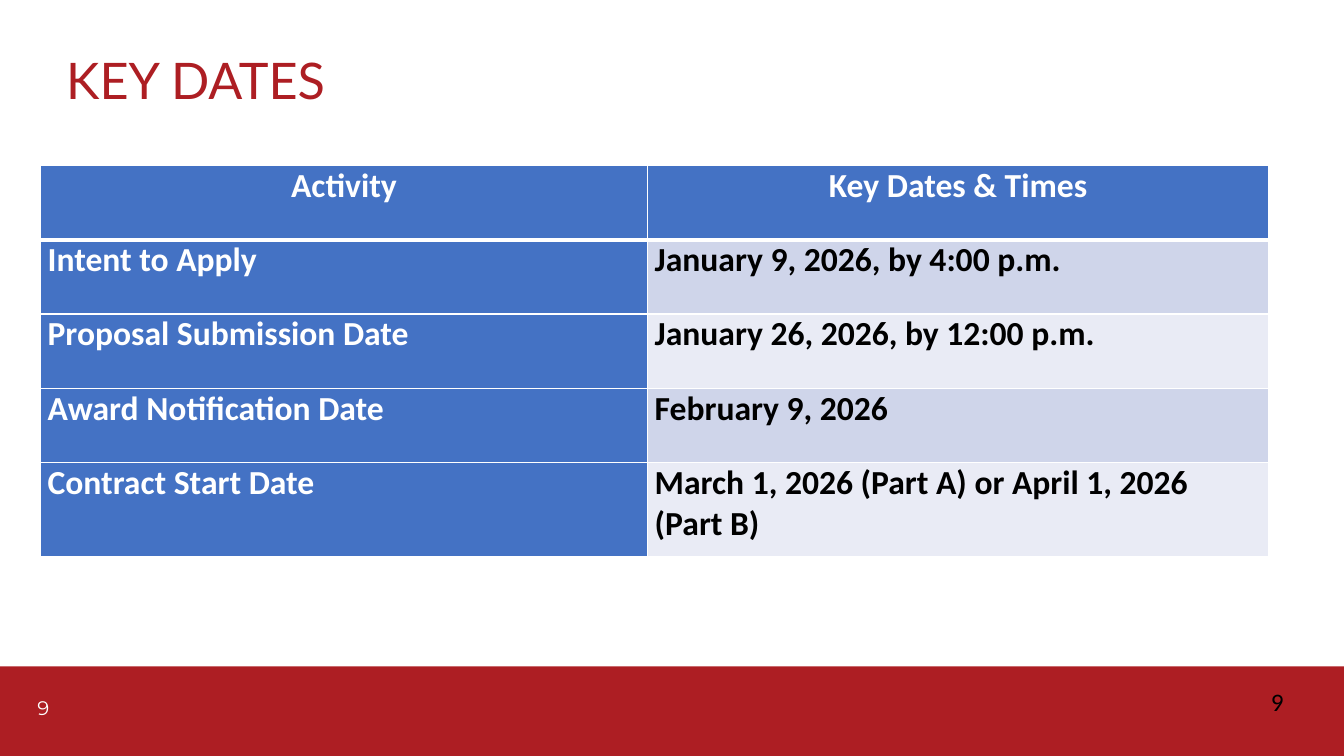
"""Build the key dates slide."""
from lxml import etree
from pptx import Presentation
from pptx.dml.color import RGBColor
from pptx.enum.shapes import MSO_SHAPE
from pptx.enum.text import MSO_ANCHOR, PP_ALIGN
from pptx.oxml.ns import qn
from pptx.util import Cm, Pt

RECT = MSO_SHAPE.RECTANGLE
MIDDLE, TOP = MSO_ANCHOR.MIDDLE, MSO_ANCHOR.TOP
CENTER, LEFT = PP_ALIGN.CENTER, PP_ALIGN.LEFT

RED, BLUE, WHITE, BLACK = "AD1E23", "4472C4", "FFFFFF", "000000"
BANDS = ("CFD5EA", "E9EBF5")
SLIDE_W, SLIDE_H, FOOTER_H = 33.87, 19.05, 2.26

TITLE = "KEY DATES"
PAGE = "9"
DATES = [
    ("Activity", "Key Dates & Times"),
    ("Intent to Apply", "January 9, 2026, by 4:00 p.m."),
    ("Proposal Submission Date", "January 26, 2026, by 12:00 p.m."),
    ("Award Notification Date", "February 9, 2026"),
    ("Contract Start Date", "March 1, 2026 (Part A) or April 1, 2026 (Part B)"),
]
COL_W = (15.3, 15.65)
ROW_H = (1.87, 1.87, 1.87, 1.87, 2.37)


def rgb(color):
    return RGBColor.from_string(color)


def write(tf, text, font="Calibri", size=24, color=BLACK, bold=False,
          align=LEFT, spacing=None):
    tf.word_wrap = True
    p = tf.paragraphs[0]
    p.alignment = align
    if spacing:
        p.line_spacing = spacing
    r = p.add_run()
    r.text = text
    r.font.name, r.font.size, r.font.bold = font, Pt(size), bold
    r.font.color.rgb = rgb(color)


def add_text(s, box, text, anchor=TOP, **fmt):
    tf = s.shapes.add_textbox(*map(Cm, box)).text_frame
    tf.vertical_anchor = anchor
    write(tf, text, **fmt)


def border(cell, **widths):
    tcPr = cell._tc.get_or_add_tcPr()
    for side, width in widths.items():
        ln = etree.SubElement(tcPr, qn(f"a:ln{side}"), w=str(Pt(width)))
        fill = etree.SubElement(ln, qn("a:solidFill"))
        etree.SubElement(fill, qn("a:srgbClr"), val=WHITE)


def add_dates(s, left, top):
    table = s.shapes.add_table(len(DATES), len(COL_W), Cm(left), Cm(top),
                               Cm(sum(COL_W)), Cm(sum(ROW_H))).table
    for col, width in zip(table.columns, COL_W):
        col.width = Cm(width)
    for i, (row, texts) in enumerate(zip(table.rows, DATES)):
        row.height = Cm(ROW_H[i])
        for j, (cell, text) in enumerate(zip(row.cells, texts)):
            label = i == 0 or j == 0
            cell.margin_left = cell.margin_right = Cm(0.18)
            cell.margin_top = cell.margin_bottom = 0
            border(cell, L=1, R=1, T=3 if i == 1 else 1, B=3 if i == 0 else 1)
            cell.fill.solid()
            cell.fill.fore_color.rgb = rgb(BLUE if label else BANDS[(i - 1) % 2])
            write(cell.text_frame, text, bold=True,
                  color=WHITE if label else BLACK,
                  align=CENTER if i == 0 else LEFT)


def main():
    prs = Presentation()
    prs.slide_width, prs.slide_height = Cm(SLIDE_W), Cm(SLIDE_H)
    s = prs.slides.add_slide(prs.slide_layouts[6])

    footer = s.shapes.add_shape(RECT, 0, Cm(SLIDE_H - FOOTER_H), Cm(SLIDE_W), Cm(FOOTER_H))
    footer.shadow.inherit = False
    footer.fill.solid()
    footer.fill.fore_color.rgb = rgb(RED)
    footer.line.fill.background()

    add_text(s, (0.69, 17.4, 1.68, 1.02), PAGE, font="Montserrat", size=14, color=WHITE)
    add_text(s, (1.42, 1.02, 29.21, 2.16), TITLE, anchor=MIDDLE, font="Lato",
             size=36, color=RED, spacing=0.9)
    add_dates(s, 1.02, 4.17)
    add_text(s, (31.78, 17.17, 0.86, 1.02), PAGE, size=18)
    prs.save("out.pptx")


if __name__ == "__main__":
    main()
